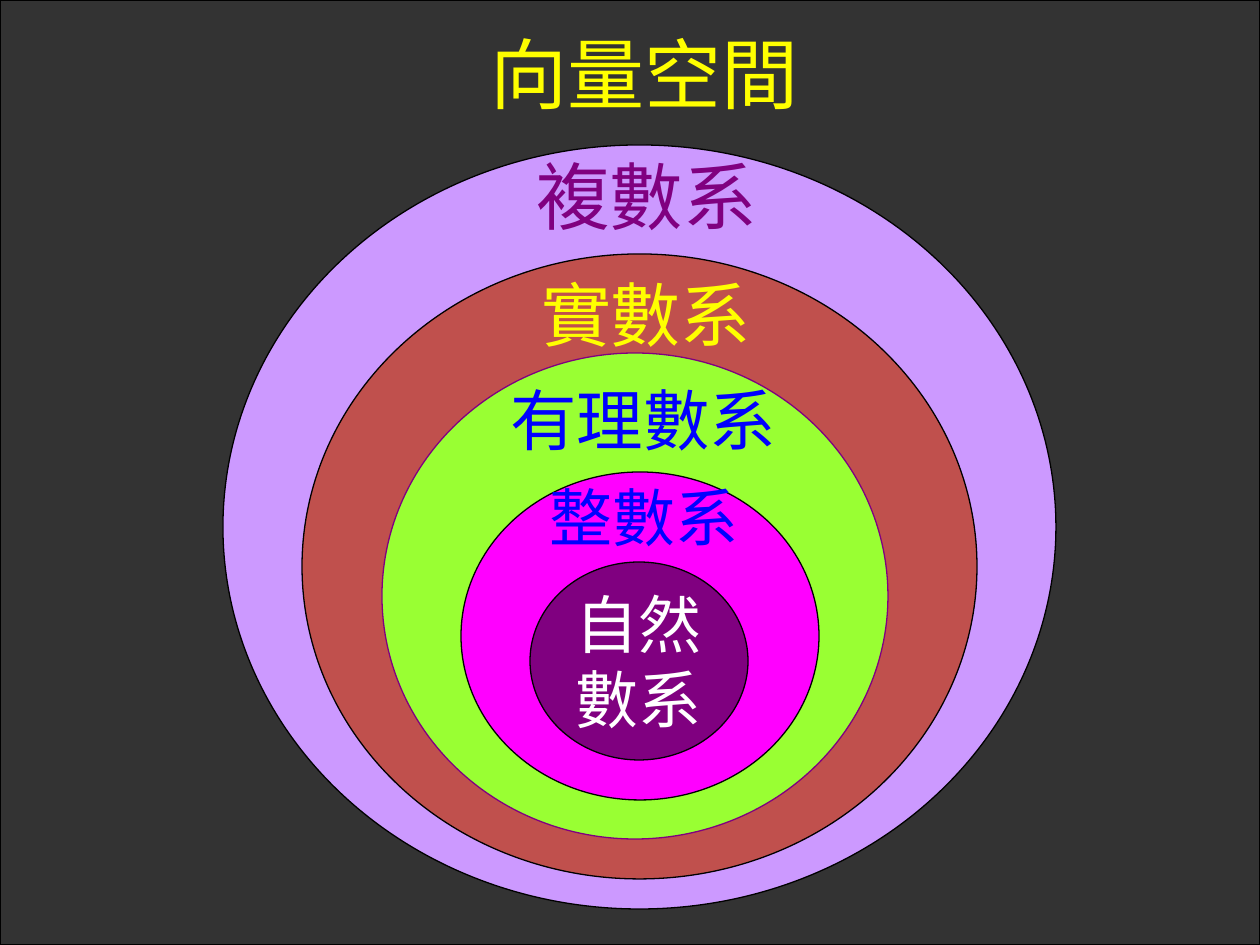
from dataclasses import dataclass

from pptx import Presentation
from pptx.dml.color import RGBColor
from pptx.enum.shapes import MSO_SHAPE
from pptx.enum.text import MSO_ANCHOR, PP_ALIGN
from pptx.util import Emu, Pt

RECTANGLE = MSO_SHAPE.RECTANGLE
OVAL = MSO_SHAPE.OVAL
CENTER = PP_ALIGN.CENTER
MIDDLE = MSO_ANCHOR.MIDDLE
EMU_PER_PX = 914400 / 126
BLANK_LAYOUT = 6


@dataclass(frozen=True)
class Theme:
    font: str = "Times New Roman"
    backdrop: str = "333333"
    black: str = "000000"
    white: str = "FFFFFF"
    yellow: str = "FFFF00"
    lilac: str = "CC99FF"
    purple: str = "800080"
    brick: str = "C0504D"
    lime: str = "99FF33"
    blue: str = "0000FF"
    magenta: str = "FF00FF"
    title_size: int = 44
    complex_size: int = 42
    real_size: int = 40
    rational_size: int = 38
    integer_size: int = 36
    line_width: float = 0.75


THEME = Theme()

NUMBER_SETS = [
    ((223, 145, 833, 764), THEME.lilac, THEME.black,
     "複數系", (484, 145, 325, 101), THEME.complex_size, THEME.purple),
    ((302, 254, 675, 625), THEME.brick, THEME.black,
     "實數系", (513, 265, 266, 97), THEME.real_size, THEME.yellow),
    ((382, 353, 506, 486), THEME.lime, THEME.purple,
     "有理數系", (481, 373, 325, 92), THEME.rational_size, THEME.blue),
    ((461, 472, 358, 328), THEME.magenta, THEME.black,
     "整數系", (528, 472, 231, 88), THEME.integer_size, THEME.blue),
]


def px(length):
    return Emu(round(length * EMU_PER_PX))


def add_filled(page, preset, bounds, fill, line):
    shape = page.shapes.add_shape(preset, *map(px, bounds))
    shape.shadow.inherit = False
    shape.fill.solid()
    shape.fill.fore_color.rgb = RGBColor.from_string(fill)
    shape.line.color.rgb = RGBColor.from_string(line)
    shape.line.width = Pt(THEME.line_width)
    return shape


def write_lines(frame, lines, size, color):
    for index, line in enumerate(lines):
        para = frame.add_paragraph() if index else frame.paragraphs[0]
        para.alignment = CENTER
        span = para.add_run()
        span.text = line
        span.font.name = THEME.font
        span.font.size = Pt(size)
        span.font.color.rgb = RGBColor.from_string(color)


def add_label(page, text, bounds, size, color):
    box = page.shapes.add_textbox(*map(px, bounds))
    box.text_frame.word_wrap = True
    write_lines(box.text_frame, [text], size, color)


def add_core(page):
    core = add_filled(page, OVAL, (530, 562, 218, 198), THEME.purple, THEME.black)
    core.text_frame.word_wrap = False
    core.text_frame.vertical_anchor = MIDDLE
    write_lines(core.text_frame, ["自然", "數系"], THEME.integer_size, THEME.white)


def main():
    deck = Presentation()
    deck.slide_width = px(1260)
    deck.slide_height = px(945)
    page = deck.slides.add_slide(deck.slide_layouts[BLANK_LAYOUT])
    add_filled(page, RECTANGLE, (0, 0, 1260, 945), THEME.backdrop, THEME.black)
    add_label(page, "向量空間", (253, 20, 784, 105), THEME.title_size, THEME.yellow)
    for bounds, fill, line, name, label_bounds, size, color in NUMBER_SETS:
        add_filled(page, OVAL, bounds, fill, line)
        add_label(page, name, label_bounds, size, color)
    add_core(page)
    deck.save("out.pptx")


if __name__ == "__main__":
    main()
